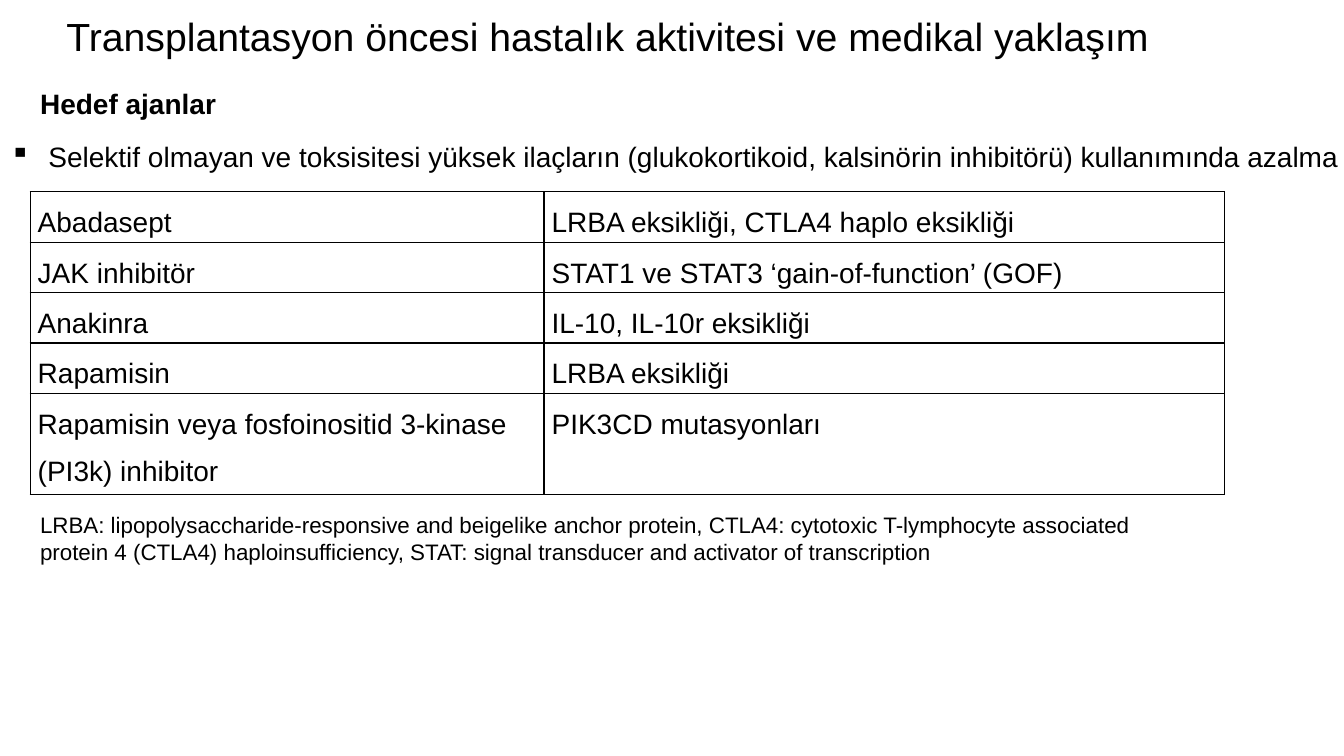
from dataclasses import dataclass

import lxml.etree
import pptx
import pptx.dml.color
import pptx.enum.text
import pptx.oxml.ns
import pptx.util

Cm = pptx.util.Cm
Pt = pptx.util.Pt
qn = pptx.oxml.ns.qn
ALIGN = pptx.enum.text.PP_ALIGN


@dataclass(frozen=True)
class Theme:
    font: str = "Arial"
    ink: str = "000000"
    title: int = 28
    body: int = 20
    note: int = 16
    border: int = 1


AGENTS = [
    ("Abadasept", "LRBA eksikliği, CTLA4 haplo eksikliği"),
    ("JAK inhibitör", "STAT1 ve STAT3 ‘gain-of-function’ (GOF)"),
    ("Anakinra", "IL-10, IL-10r eksikliği"),
    ("Rapamisin", "LRBA eksikliği"),
    ("Rapamisin veya fosfoinositid 3-kinase (PI3k) inhibitor",
     "PIK3CD mutasyonları"),
]
ABBREVIATIONS = (
    "LRBA: lipopolysaccharide-responsive and beigelike anchor protein, "
    "CTLA4: cytotoxic T-lymphocyte associated\n"
    "protein 4 (CTLA4) haploinsufficiency, "
    "STAT: signal transducer and activator of transcription"
)


def write(tf, text, *, theme, size, bold=False, align=ALIGN.LEFT,
          spacing=1.0, bullet=None, indent=0.97):
    """Fill a text frame, one paragraph per line; indent is in cm."""
    tf.word_wrap = True
    for i, line in enumerate(text.split("\n")):
        p = tf.add_paragraph() if i else tf.paragraphs[0]
        p.alignment = align
        p.line_spacing = spacing
        p.space_before = Pt(0)
        r = p.add_run()
        r.text = line
        r.font.name = theme.font
        r.font.size = Pt(size)
        r.font.bold = bold
        r.font.color.rgb = pptx.dml.color.RGBColor.from_string(theme.ink)
        if bullet:
            pPr = p._p.get_or_add_pPr()
            pPr.set("marL", str(Cm(indent)))
            pPr.set("indent", str(-Cm(indent)))
            lxml.etree.SubElement(pPr, qn("a:buChar"), char=bullet)


def add_borders(cell, color, width):
    tcPr = cell._tc.get_or_add_tcPr()
    for i, side in enumerate("LRTB"):
        ln = lxml.etree.Element(qn(f"a:ln{side}"), w=str(Pt(width)))
        fill = lxml.etree.SubElement(ln, qn("a:solidFill"))
        lxml.etree.SubElement(fill, qn("a:srgbClr"), val=color)
        tcPr.insert(i, ln)


class SlideBuilder:
    def __init__(self, prs, theme):
        self.theme = theme
        self.s = prs.slides.add_slide(prs.slide_layouts[5])

    def title(self, text, left, top, width, height):
        sp = self.s.shapes.title
        sp.left, sp.top, sp.width, sp.height = map(
            Cm, (left, top, width, height))
        tf = sp.text_frame
        tf.vertical_anchor = pptx.enum.text.MSO_ANCHOR.TOP
        tf.auto_size = pptx.enum.text.MSO_AUTO_SIZE.SHAPE_TO_FIT_TEXT
        write(tf, text, theme=self.theme, size=self.theme.title)

    def text(self, text, left, top, width, height, **fmt):
        sp = self.s.shapes.add_textbox(*map(Cm, (left, top, width, height)))
        sp.text_frame.auto_size = (
            pptx.enum.text.MSO_AUTO_SIZE.SHAPE_TO_FIT_TEXT)
        write(sp.text_frame, text, theme=self.theme, **fmt)

    def table(self, rows, left, top, widths, heights):
        box = map(Cm, (left, top, sum(widths), sum(heights)))
        table = self.s.shapes.add_table(len(rows), len(widths), *box).table
        table.first_row = table.horz_banding = False
        for column, width in zip(table.columns, widths):
            column.width = Cm(width)
        for row, height, texts in zip(table.rows, heights, rows):
            row.height = Cm(height)
            for cell, text in zip(row.cells, texts):
                cell.margin_left = cell.margin_right = Cm(0.19)
                cell.margin_top = cell.margin_bottom = 0
                cell.fill.background()
                add_borders(cell, self.theme.ink, self.theme.border)
                write(cell.text_frame, text, theme=self.theme,
                      size=self.theme.body, spacing=1.5)


def main():
    prs = pptx.Presentation()
    prs.slide_width, prs.slide_height = Cm(33.87), Cm(19.05)
    theme = Theme()
    slide = SlideBuilder(prs, theme)
    margin = 0.76
    slide.title("Transplantasyon öncesi hastalık aktivitesi ve medikal yaklaşım",
                1.42, 0.18, 32.94, 1.45)
    slide.text("Hedef ajanlar", margin, 2.06, 17.58, 1.12,
               size=theme.body, bold=True)
    slide.table(AGENTS, margin, 4.83, [12.95, 17.15], [1.27] * 4 + [2.54])
    slide.text(ABBREVIATIONS, margin, 12.75, 31.17, 1.63, size=theme.note)
    slide.text("Selektif olmayan ve toksisitesi yüksek ilaçların "
               "(glukokortikoid, kalsinörin inhibitörü) kullanımında azalma",
               0, 3.33, 34.39, 1.17, size=theme.body,
               align=ALIGN.JUSTIFY, spacing=1.07, bullet="▪")
    prs.save("out.pptx")


if __name__ == "__main__":
    main()
